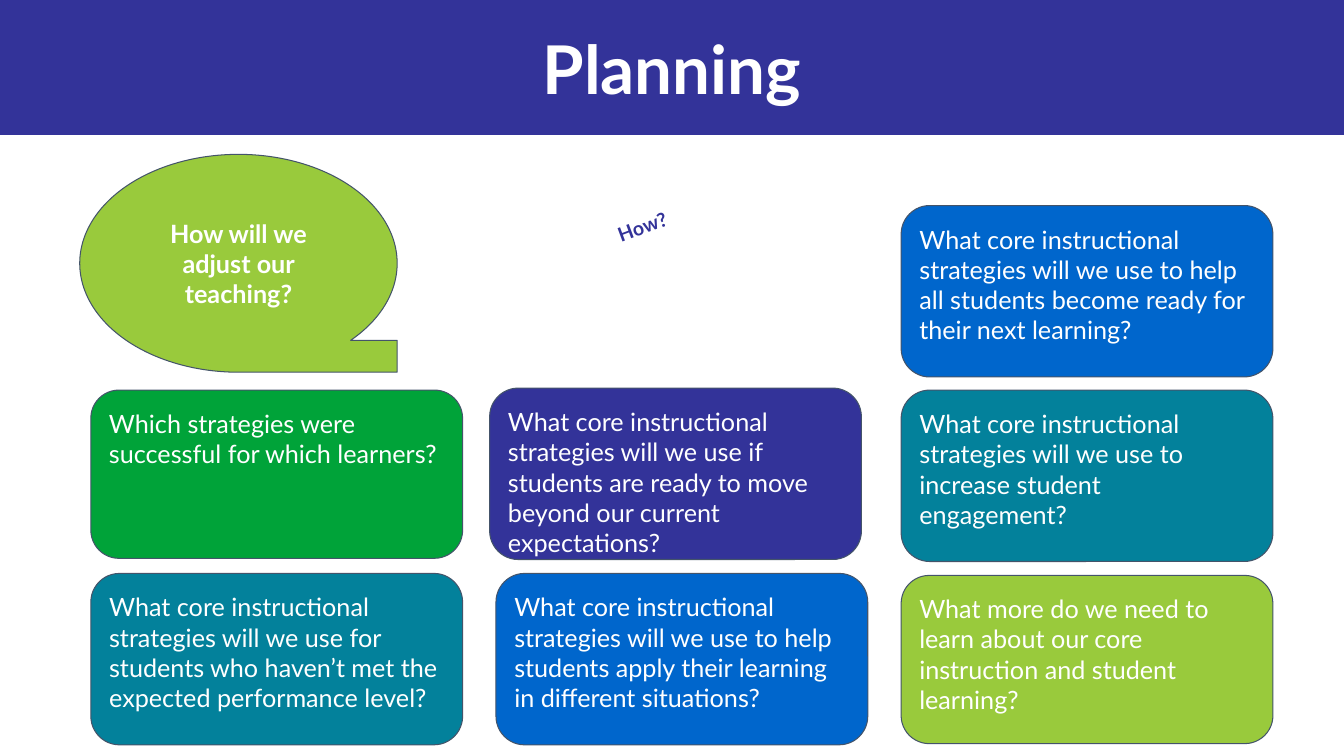
"""Build the Planning slide with its question cards."""
import dataclasses

import pptx
import pptx.dml.color
import pptx.enum.shapes
import pptx.enum.text
import pptx.presentation
import pptx.shapes.autoshape
import pptx.slide
import pptx.text.text
import pptx.util

Cm = pptx.util.Cm
Pt = pptx.util.Pt
Preset = pptx.enum.shapes.MSO_SHAPE
Align = pptx.enum.text.PP_ALIGN
Anchor = pptx.enum.text.MSO_ANCHOR

INDIGO = "333399"
LIME = "99CA3C"
GREEN = "00A339"
TEAL = "03819B"
BLUE = "0066CC"
WHITE = "FFFFFF"
OUTLINE = "44546A"

LEFT_COLUMN, RIGHT_COLUMN = 2.29, 22.71
MIDDLE_ROW, BOTTOM_ROW = 9.83, 14.45
CARD_WIDTH, CARD_HEIGHT, SHORT_CARD_HEIGHT = 9.37, 4.32, 4.24
INSET = 0.25


@dataclasses.dataclass(frozen=True)
class Box:
    """Position and size in centimetres."""
    left: float
    top: float
    width: float
    height: float

    def lengths(self) -> tuple[pptx.util.Length, ...]:
        """Return the box as slide lengths."""
        return Cm(self.left), Cm(self.top), Cm(self.width), Cm(self.height)


@dataclasses.dataclass(frozen=True)
class Card:
    """A question on a coloured card."""
    question: str
    left: float
    top: float
    fill: str
    height: float = CARD_HEIGHT


CARDS = [
    Card("Which strategies were successful for which learners?",
         LEFT_COLUMN, MIDDLE_ROW, GREEN, SHORT_CARD_HEIGHT),
    Card("What core instructional strategies will we use for students who "
         "haven’t met the expected performance level?",
         LEFT_COLUMN, BOTTOM_ROW, TEAL),
    Card("What core instructional strategies will we use to help all students "
         "become ready for their next learning?", RIGHT_COLUMN, 5.18, BLUE),
    Card("What core instructional strategies will we use if students are ready "
         "to move beyond our current expectations?", 12.34, 9.78, INDIGO),
    Card("What core instructional strategies will we use to help students apply "
         "their learning in different situations?", 12.5, BOTTOM_ROW, BLUE),
    Card("What core instructional strategies will we use to increase student "
         "engagement?", RIGHT_COLUMN, MIDDLE_ROW, TEAL),
    Card("What more do we need to learn about our core instruction and student "
         "learning?", RIGHT_COLUMN, 14.5, LIME, SHORT_CARD_HEIGHT),
]


def rgb(value: str) -> pptx.dml.color.RGBColor:
    """Turn a hex string into a colour."""
    return pptx.dml.color.RGBColor.from_string(value)


def write(frame: pptx.text.text.TextFrame, wording: str, size: float,
          color: str = WHITE, bold: bool = True, align: Align = Align.CENTER,
          anchor: Anchor = Anchor.MIDDLE) -> None:
    """Put formatted wording into a text frame."""
    frame.text = wording
    frame.word_wrap = True
    frame.vertical_anchor = anchor
    paragraph = frame.paragraphs[0]
    paragraph.alignment = align
    font = paragraph.runs[0].font
    font.name = "Lato"
    font.size = Pt(size)
    font.bold = bold
    font.color.rgb = rgb(color)


def add_panel(slide: pptx.slide.Slide, preset: Preset, box: Box, fill: str,
              outlined: bool = True) -> pptx.shapes.autoshape.Shape:
    """Add a filled shape with an optional thin outline."""
    panel = slide.shapes.add_shape(preset, *box.lengths())
    panel.shadow.inherit = False
    panel.fill.solid()
    panel.fill.fore_color.rgb = rgb(fill)
    if outlined:
        panel.line.color.rgb = rgb(OUTLINE)
        panel.line.width = Pt(0.75)
        frame = panel.text_frame
        frame.margin_left = frame.margin_right = Cm(INSET)
        frame.margin_top = frame.margin_bottom = Cm(INSET)
    else:
        panel.line.fill.background()
    return panel


def add_card(slide: pptx.slide.Slide, card: Card) -> None:
    """Add one rounded question card."""
    box = Box(card.left, card.top, CARD_WIDTH, card.height)
    panel = add_panel(slide, Preset.ROUNDED_RECTANGLE, box, card.fill)
    panel.adjustments[0] = 0.167
    write(panel.text_frame, card.question, 18, bold=False, align=Align.LEFT,
          anchor=Anchor.TOP)
    panel.text_frame.paragraphs[0].space_after = Pt(16)


def main() -> None:
    """Build and save the slide."""
    deck = pptx.Presentation()
    deck.slide_width, deck.slide_height = Cm(33.87), Cm(19.05)
    slide = deck.slides.add_slide(deck.slide_layouts[6])

    banner = add_panel(slide, Preset.RECTANGLE, Box(0, 0, 33.87, 3.4), INDIGO,
                       outlined=False)
    write(banner.text_frame, "Planning", 48)

    key_question = add_panel(slide, Preset.FLOWCHART_SEQUENTIAL_ACCESS_STORAGE,
                             Box(2.01, 3.89, 8, 5.49), LIME)
    write(key_question.text_frame, "How will we adjust our teaching?", 18)

    for card in CARDS:
        add_card(slide, card)

    how = slide.shapes.add_textbox(*Box(14.3, 5.26, 4.11, 1.8).lengths())
    how.rotation = 339.6
    write(how.text_frame, "How?", 14, INDIGO, anchor=Anchor.TOP)

    deck.save("out.pptx")


if __name__ == "__main__":
    main()
